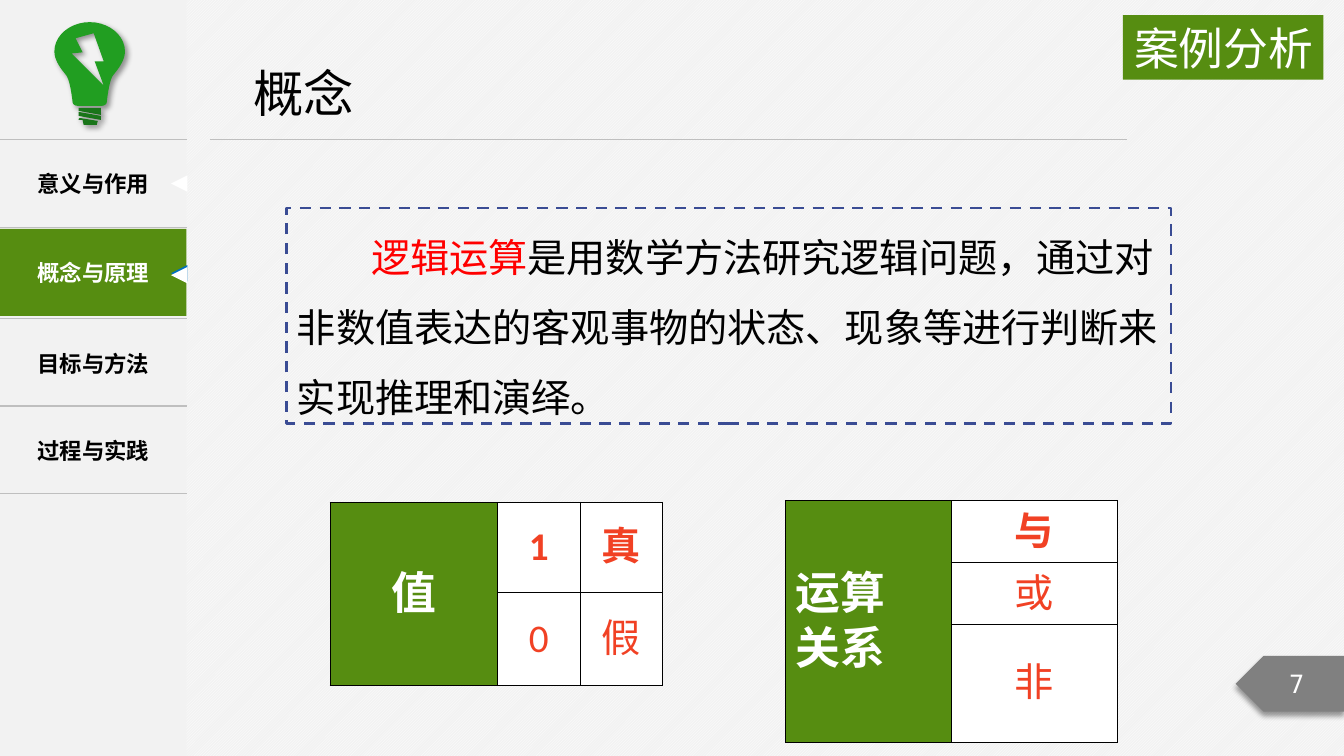
from dataclasses import dataclass

from lxml import etree
from pptx import Presentation
from pptx.dml.color import RGBColor
from pptx.enum import dml, shapes, text
from pptx.oxml.ns import qn
from pptx.util import Cm, Pt


@dataclass(frozen=True)
class Theme:
    paper: str = "F2F2F2"
    white: str = "FFFFFF"
    ink: str = "000000"
    rule: str = "BFBFBF"
    green: str = "568D11"
    bulb: str = "219E21"
    socket: str = "197519"
    blue: str = "0070C0"
    frame: str = "3A4C94"
    red: str = "FF0000"
    value: str = "F14124"
    grey: str = "808080"
    cjk: str = "Noto Sans CJK SC"
    latin: str = "Calibri"
    mono: str = "DejaVu Sans Mono"
    title: int = 36
    head: int = 32
    body: int = 28
    page: int = 18
    nav: int = 16


T = Theme()

TITLE = "概念"
BADGE = "案例分析"
PAGE = "7"
NAV_DONE = "意义与作用"
NAV_CURRENT = "概念与原理"
NAV_NEXT = ["目标与方法", "过程与实践"]
DEFINITION = [
    ("逻辑运算", T.red),
    ("是用数学方法研究逻辑问题，通过对非数值表达的客观事物的状态、现象等进行判断来实现推理和演绎。", T.ink),
]
VALUES = {"head": "值", "rows": [("1", "真"), ("0", "假")], "align": text.PP_ALIGN.CENTER,
          "at": (8.32, 12.66), "cols": (4.22, 2.08, 2.08), "heights": (2.28, 2.34)}
RELATIONS = {"head": "运算\n关系", "rows": [("与",), ("或",), ("非",)], "align": text.PP_ALIGN.LEFT,
             "at": (19.8, 12.62), "cols": (4.18, 4.18), "heights": (1.56, 1.56, 1.56)}

NAV_WIDTH, NAV_TOP = 4.7, 3.52
NAV_HEIGHTS = (2.21, 2.3, 2.2, 2.2)
MARKER = 0.41

BULB_AXIS = 89
BULB_SIDE = [
    [(89, 22), (70, 22), (54, 35), (54, 51)],
    [(54, 51), (54, 61), (62, 70), (66, 75)],
    [(66, 75), (70, 81), (72, 101), (72, 101)],
    [(72, 101), (72, 103), (74, 105), (77, 105)],
]
BOLT = [(71, 53), (82, 52), (75, 38), (93, 33), (103, 61), (94, 61), (103, 85)]
SOCKET = [
    [(78, 107), (100, 107), (100, 114), (78, 110)],
    [(100, 119), (100, 115), (78, 111), (78, 115)],
    [(79, 117), (97, 120), (96, 124), (83, 124), (82, 119), (78, 119), (78, 118)],
]


def rgb(value):
    return RGBColor.from_string(value)


def style(paragraph, size, color, font=T.cjk, bold=False, align=None):
    paragraph.alignment = align
    for run in paragraph.runs:
        run.font.size, run.font.bold, run.font.name = Pt(size), bold, font
        run.font.color.rgb = rgb(color)
        latin = run.font._element.find(qn("a:latin"))
        latin.addnext(etree.Element(qn("a:ea"), typeface=font))


def place(shape, left, top, width, height):
    shape.left, shape.top, shape.width, shape.height = map(Cm, (left, top, width, height))


def paint(shape, fill):
    shape.shadow.inherit = False
    shape.fill.solid()
    shape.fill.fore_color.rgb = rgb(fill)
    shape.line.fill.background()


def cast_shadow(shape, angle):
    effects = shape._element.spPr.find(qn("a:effectLst"))
    outer = etree.SubElement(effects, qn("a:outerShdw"), blurRad=str(Pt(4)), dist=str(Pt(3)),
                             dir=str(angle * 60000), algn="ctr", rotWithShape="0")
    color = etree.SubElement(outer, qn("a:srgbClr"), val=T.ink)
    etree.SubElement(color, qn("a:alpha"), val="40000")


def block(kind, box, fill):
    shape = slide.shapes.add_shape(kind, *map(Cm, box))
    paint(shape, fill)
    return shape


def label(holder, words, size, color, align=text.PP_ALIGN.CENTER, **look):
    frame = holder.text_frame
    frame.text, frame.word_wrap = words, True
    holder.margin_top = holder.margin_bottom = frame.margin_top = frame.margin_bottom = 0
    frame.vertical_anchor = text.MSO_ANCHOR.MIDDLE
    style(frame.paragraphs[0], size, color, align=align, **look)


def border(cell, colors):
    props = cell._tc.get_or_add_tcPr()
    for index, (side, color) in enumerate(zip("LRTB", colors)):
        line = etree.Element(qn("a:ln" + side), w=str(Pt(1)))
        if color:
            fill = etree.SubElement(line, qn("a:solidFill"))
            etree.SubElement(fill, qn("a:srgbClr"), val=color)
        else:
            etree.SubElement(line, qn("a:noFill"))
        props.insert(index, line)


def grid(left, top, cols, heights):
    table = slide.shapes.add_table(len(heights), len(cols), Cm(left), Cm(top),
                                   Cm(sum(cols)), Cm(sum(heights))).table
    table.first_row = table.horz_banding = False
    for column, width in zip(table.columns, cols):
        column.width = Cm(width)
    for row, height in zip(table.rows, heights):
        row.height = Cm(height)
    return table


def fill_cell(cell, words, size, color, fill, bold, align):
    cell.text = words
    cell.vertical_anchor = text.MSO_ANCHOR.MIDDLE
    for paragraph in cell.text_frame.paragraphs:
        style(paragraph, size, color, T.latin, bold, align)
    cell.fill.solid()
    cell.fill.fore_color.rgb = rgb(fill)


def headed_table(data):
    table = grid(*data["at"], data["cols"], data["heights"])
    table.cell(0, 0).merge(table.cell(len(data["rows"]) - 1, 0))
    fill_cell(table.cell(0, 0), data["head"], T.head, T.white, T.green, True, data["align"])
    for r, row in enumerate(data["rows"]):
        for c, words in enumerate(row, 1):
            fill_cell(table.cell(r, c), words, T.body, T.value, T.white, r == 0, text.PP_ALIGN.CENTER)
    for cell in table.iter_cells():
        border(cell, [T.ink] * 4)


def curve(points, steps=10):
    for i in range(steps + 1):
        t = i / steps
        weights = ((1 - t) ** 3, 3 * t * (1 - t) ** 2, 3 * t * t * (1 - t), t ** 3)
        yield tuple(sum(w * p[axis] for w, p in zip(weights, points)) for axis in (0, 1))


def outline(contours, fill):
    first, *others = [[(x * Cm(0.0254), y * Cm(0.0254)) for x, y in c] for c in contours]
    builder = slide.shapes.build_freeform(*first[0])
    builder.add_line_segments(first[1:], close=True)
    for contour in others:
        builder.move_to(*contour[0])
        builder.add_line_segments(contour[1:], close=True)
    shape = builder.convert_to_shape()
    paint(shape, fill)
    cast_shadow(shape, 45)


deck = Presentation()
deck.slide_width, deck.slide_height = Cm(33.87), Cm(19.05)
slide = deck.slides.add_slide(deck.slide_layouts[1])
backdrop = slide.background.fill
backdrop.patterned()
backdrop.pattern = dml.MSO_PATTERN.LIGHT_UPWARD_DIAGONAL
backdrop.fore_color.rgb, backdrop.back_color.rgb = rgb(T.white), rgb(T.paper)

block(shapes.MSO_SHAPE.RECTANGLE, (0, 0, NAV_WIDTH, 19.05), T.paper)
rule = slide.shapes.add_connector(shapes.MSO_CONNECTOR.STRAIGHT, Cm(5.3), Cm(3.52), Cm(28.4), Cm(3.52))
rule.line.color.rgb, rule.line.width = rgb(T.rule), Pt(0.5)
etree.SubElement(rule._element.spPr, qn("a:effectLst"))

title = slide.shapes.title
place(title, 6.13, 1.43, 20, 1.8)
label(title, TITLE, T.title, T.ink, text.PP_ALIGN.LEFT)

page = block(shapes.MSO_SHAPE.PENTAGON, (31.14, 16.53, 2.73, 1.4), T.grey)
page._element.spPr.find(qn("a:xfrm")).set("flipH", "1")
cast_shadow(page, 90)
label(page, PAGE, T.page, T.white, font=T.mono)

nav = grid(0, NAV_TOP, (NAV_WIDTH,), NAV_HEIGHTS)
for entry in nav.iter_cells():
    entry.fill.background()
    border(entry, (None, None, T.rule, T.rule))
for row, topic in enumerate(NAV_NEXT, 2):
    label(nav.cell(row, 0), topic, T.nav, T.ink, bold=True)
    nav.cell(row, 0).vertical_anchor = text.MSO_ANCHOR.MIDDLE
done = slide.shapes.add_textbox(0, Cm(NAV_TOP), Cm(NAV_WIDTH), Cm(2.19))
label(done, NAV_DONE, T.nav, T.ink, bold=True)
current = block(shapes.MSO_SHAPE.RECTANGLE, (0, 5.77, NAV_WIDTH, 2.19), T.green)
label(current, NAV_CURRENT, T.nav, T.white, bold=True)
for top, color in ((4.42, T.white), (6.68, T.blue), (6.73, T.white)):
    marker = block(shapes.MSO_SHAPE.ISOSCELES_TRIANGLE, (4.31, top, MARKER, MARKER), color)
    marker.rotation = 270

badge = block(shapes.MSO_SHAPE.RECTANGLE, (28.3, 0.38, 5.05, 1.63), T.green)
label(badge, BADGE, T.head, T.white, text.PP_ALIGN.RIGHT)

side = [point for segment in BULB_SIDE for point in curve(segment)]
mirrored = [(2 * BULB_AXIS - x, y) for x, y in reversed(side)]
outline([side + mirrored, BOLT], T.bulb)
for thread in SOCKET:
    outline([thread], T.socket)

definition = slide.placeholders[1]
place(definition, 7.23, 5.24, 22.28, 5.43)
definition.line.color.rgb, definition.line.width = rgb(T.frame), Pt(2)
definition.line.dash_style = dml.MSO_LINE.DASH
frame = definition.text_frame
frame.auto_size, frame.vertical_anchor = text.MSO_AUTO_SIZE.NONE, text.MSO_ANCHOR.MIDDLE
sentence = frame.paragraphs[0]
for words, _ in DEFINITION:
    sentence.add_run().text = words
style(sentence, T.body, T.ink, align=text.PP_ALIGN.LEFT)
for run, (_, color) in zip(sentence.runs, DEFINITION):
    run.font.color.rgb = rgb(color)
sentence.line_spacing, sentence.space_before = Pt(50), Pt(0)
layout = sentence._p.get_or_add_pPr()
layout.set("marL", "0")
layout.set("indent", str(Cm(1.87)))
etree.SubElement(layout, qn("a:buNone"))

headed_table(VALUES)
headed_table(RELATIONS)

deck.save("out.pptx")
